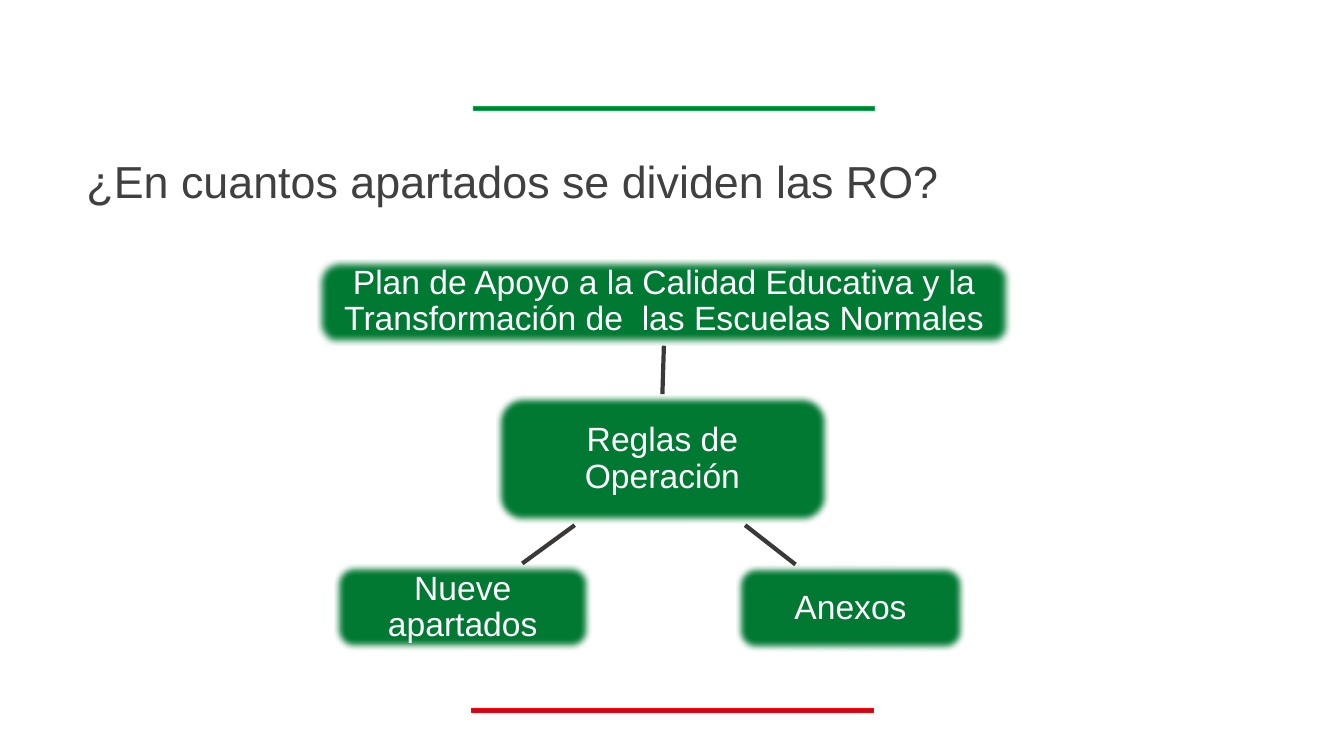
from lxml.etree import SubElement
from pptx import Presentation
from pptx.dml.color import RGBColor
from pptx.enum.shapes import MSO_CONNECTOR, MSO_SHAPE
from pptx.enum.text import MSO_ANCHOR, MSO_AUTO_SIZE, PP_ALIGN
from pptx.oxml.ns import qn
from pptx.util import Inches, Pt

WIDTH, HEIGHT = 13.33, 7.5
FONT = "Arial"
GREEN, WHITE, DARK, GREY = "007A33", "FFFFFF", "3B3838", "404040"
TITLE = "¿En cuantos apartados se dividen las RO?"
RULES = [
    (4.68, 7.03, "BA0C2F", "FF0000"),
    (4.69, 1.06, GREEN, "00B050"),
]
RULE_SIZE = (3.98, 0.04)
NODES = {
    "reglas": ("Reglas de Operación", 4.91, 3.91, 3.32, 1.29),
    "plan": ("Plan de Apoyo a la Calidad Educativa y la "
             "Transformación de  las Escuelas Normales", 3.14, 2.56, 6.89, 0.87),
    "anexos": ("Anexos", 7.29, 5.6, 2.29, 0.87),
    "apartados": ("Nueve apartados", 3.31, 5.59, 2.56, 0.87),
}
BRANCHES = [(7.39, 5.21, 7.89, 5.6), (5.7, 5.21, 5.18, 5.59)]
SOFT_EDGE = Pt(5)
INSET = 0.07


def color(value):
    return RGBColor.from_string(value)


def add_block(page, kind, place, fill, line, line_width):
    block = page.shapes.add_shape(kind, *map(Inches, place))
    block.shadow.inherit = False
    block.fill.solid()
    block.fill.fore_color.rgb = color(fill)
    block.line.color.rgb = color(line)
    block.line.width = Pt(line_width)
    return block


def write(para, text, size, ink):
    span = para.add_run()
    span.text = text
    span.font.name = FONT
    span.font.size = Pt(size)
    span.font.color.rgb = color(ink)


def add_node(page, text, *place):
    node = add_block(page, MSO_SHAPE.ROUNDED_RECTANGLE, place, GREEN, WHITE, 1)
    effects = node._element.spPr.find(qn("a:effectLst"))
    SubElement(effects, qn("a:softEdge"), rad=str(int(SOFT_EDGE)))
    frame = node.text_frame
    frame.word_wrap = True
    frame.vertical_anchor = MSO_ANCHOR.MIDDLE
    frame.margin_left = frame.margin_right = Inches(INSET)
    frame.margin_top = frame.margin_bottom = Inches(INSET)
    para = frame.paragraphs[0]
    para.alignment = PP_ALIGN.CENTER
    para.line_spacing = 0.9
    write(para, text, 24, WHITE)
    return node


def add_link(page, *ends):
    link = page.shapes.add_connector(MSO_CONNECTOR.STRAIGHT, *map(Inches, ends))
    link.line.color.rgb = color(DARK)
    link.line.width = Pt(3)
    SubElement(link._element.spPr, qn("a:effectLst"))
    return link


def add_title(page):
    box = page.shapes.add_textbox(*map(Inches, (0.76, 1.48, 12.43, 0.64)))
    frame = box.text_frame
    frame.word_wrap = True
    frame.auto_size = MSO_AUTO_SIZE.SHAPE_TO_FIT_TEXT
    write(frame.paragraphs[0], TITLE, 32, GREY)


def main():
    deck = Presentation()
    deck.slide_width, deck.slide_height = Inches(WIDTH), Inches(HEIGHT)
    page = deck.slides.add_slide(deck.slide_layouts[6])
    for left, top, fill, line in RULES:
        add_block(page, MSO_SHAPE.RECTANGLE, (left, top, *RULE_SIZE), fill, line, 0.5)
    nodes = {name: add_node(page, *node) for name, node in NODES.items()}
    trunk = add_link(page, 6.58, 3.43, 6.57, 3.91)
    trunk.begin_connect(nodes["plan"], 2)
    trunk.end_connect(nodes["reglas"], 0)
    for ends in BRANCHES:
        add_link(page, *ends)
    add_title(page)
    deck.save("out.pptx")


if __name__ == "__main__":
    main()
